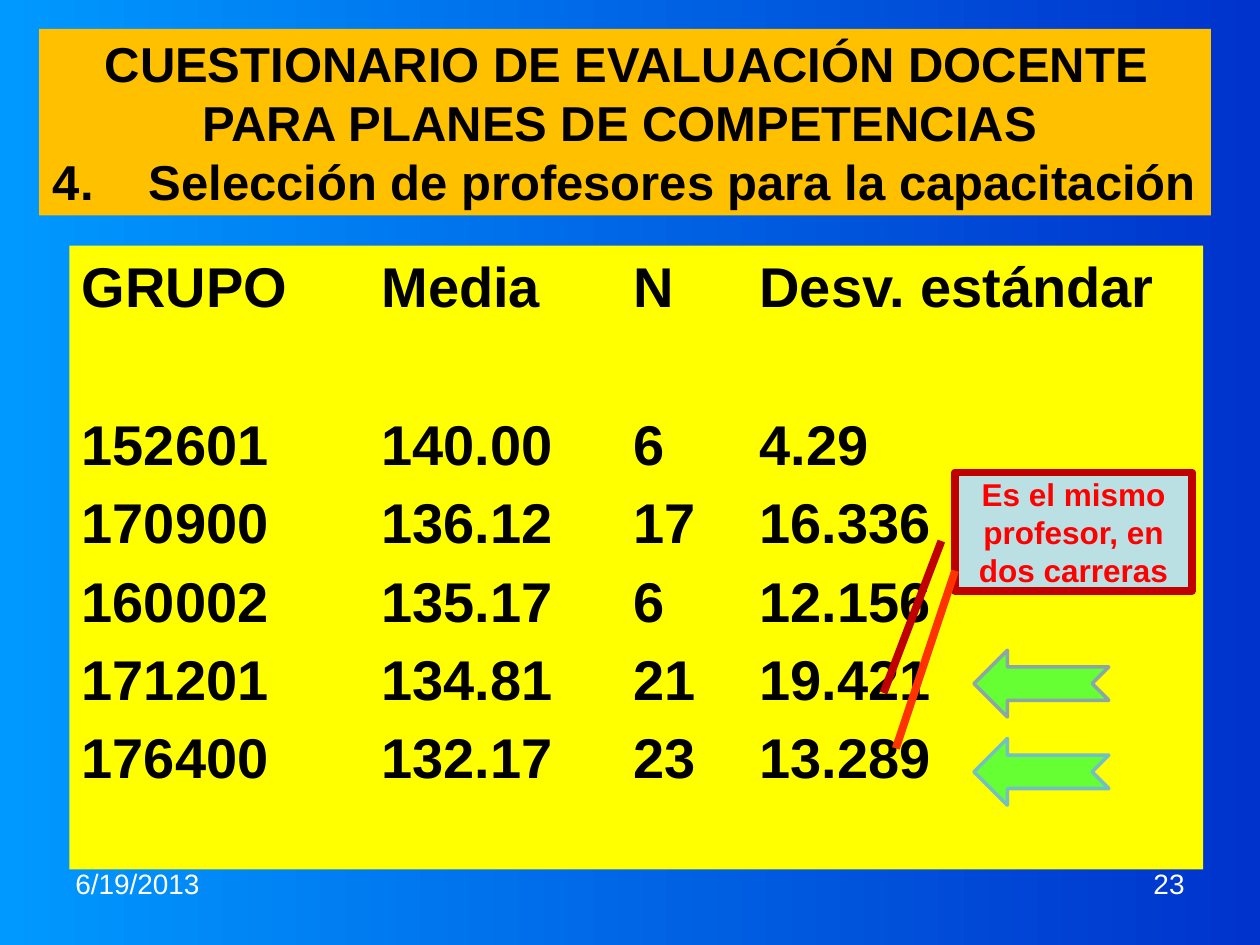
import pptx
import pptx.util
import pptx.dml.color
import pptx.enum.shapes
import pptx.enum.text
import pptx.oxml
import pptx.oxml.ns

COLS, ROWS = 1000, 750
HUES = {
    "sky": "0099FF", "navy": "0033CC", "gold": "FFC000", "yellow": "FFFF00",
    "black": "000000", "white": "FFFFFF", "pale": "BBE0E3", "wine": "C00000",
    "red": "FF0000", "flame": "FF3300", "lime": "66FF33", "gray": "8AA6A8",
    "teal": "72BFC5",
}
HEAD = ["CUESTIONARIO DE EVALUACIÓN DOCENTE", "PARA PLANES DE COMPETENCIAS ",
        "4.\tSelección de profesores para la capacitación"]
DATA = [
    ("GRUPO", "Media", "N", "Desv. estándar"),
    ("152601", "140.00", "6", "4.29"),
    ("170900", "136.12", "17", "16.336"),
    ("160002", "135.17", "6", "12.156"),
    ("171201", "134.81", "21", "19.421"),
    ("176400", "132.17", "23", "13.289"),
]
SHAPE = pptx.enum.shapes.MSO_SHAPE
ALIGN = pptx.enum.text.PP_ALIGN
ANCHOR = pptx.enum.text.MSO_ANCHOR
Pt, Inches = pptx.util.Pt, pptx.util.Inches


def hue(name):
    """Return the colour that has this name."""
    return pptx.dml.color.RGBColor.from_string(HUES[name])


def span(cells):
    """Turn grid cells into a length."""
    return int(cells * Inches(10) / COLS)


def shift(box, part):
    """Move a part's box into the frame of its region."""
    return (box[0] + part[0], box[1] + part[1], *part[2:])


def apply(item, form):
    """Set each attribute that a dict of format values names."""
    for key, value in form.items():
        setattr(item, key, value)


def paint(shape, fill, line=None, width=0):
    """Give a shape a plain fill and an optional outline."""
    shape.fill.solid()
    shape.fill.fore_color.rgb = hue(fill)
    if line:
        shape.line.color.rgb = hue(line)
        shape.line.width = Pt(width)
    else:
        shape.line.fill.background()


def write(shape, lines, size, color, bold=True, align=ALIGN.LEFT, **frame):
    """Write one formatted paragraph for each line."""
    text = shape.text_frame
    base = {"word_wrap": True, "auto_size": pptx.enum.text.MSO_AUTO_SIZE.NONE}
    apply(text, {**base, **frame})
    text.text = "\n".join(lines)
    for para in text.paragraphs:
        para.alignment = align
        for run in para.runs:
            apply(run.font, {"name": "Arial", "size": Pt(size), "bold": bold})
            run.font.color.rgb = hue(color)
    return text.paragraphs


def hang(para, inches):
    """Give a paragraph a hanging indent and tabs one inch apart."""
    props = para._p.get_or_add_pPr()
    props.set("marL", str(Inches(inches)))
    props.set("indent", str(-Inches(inches)))
    props.set("defTabSz", str(Inches(1)))


def draw(slide, kind, box):
    """Add a preset shape without a shadow."""
    shape = slide.shapes.add_shape(kind, *map(span, box))
    shape.shadow.inherit = False
    return shape


def title(slide, box):
    """Place the title band with its numbered last line."""
    shape = slide.shapes.title
    apply(shape, dict(zip(("left", "top", "width", "height"), map(span, box))))
    paint(shape, "gold")
    paras = write(shape, HEAD, 28, "black", align=ALIGN.CENTER,
                  vertical_anchor=ANCHOR.MIDDLE,
                  margin_left=Inches(0.11), margin_right=Inches(0.09))
    for para in paras:
        apply(para, {"line_spacing": 1.0, "space_before": Pt(0)})
    paras[-1].alignment = ALIGN.LEFT
    hang(paras[-1], 0.76)


def note(slide, box):
    """Place the callout about the shared teacher."""
    shape = draw(slide, SHAPE.LINE_CALLOUT_1, box)
    for i, value in enumerate((0.579, -0.058, 1.861, -0.302)):
        shape.adjustments[i] = value
    paint(shape, "pale", "wine", 4.5)
    write(shape, ["Es el mismo profesor, en dos carreras"], 18, "red",
          align=ALIGN.CENTER, vertical_anchor=ANCHOR.MIDDLE)


def arrow(slide, box, line):
    """Place an arrow that points left at a row."""
    shape = draw(slide, SHAPE.NOTCHED_RIGHT_ARROW, box)
    shape.rotation = 180
    paint(shape, "lime", line, 2)


def link(slide, start, end):
    """Draw the line from the callout to the last row."""
    kind = pptx.enum.shapes.MSO_CONNECTOR.STRAIGHT
    line = slide.shapes.add_connector(kind, *map(span, start + end))
    line.line.color.rgb = hue("flame")
    line.line.width = Pt(4.5)
    props = line._element.spPr
    props.append(pptx.oxml.parse_xml(
        "<a:effectLst %s/>" % pptx.oxml.ns.nsdecls("a")))


def board(slide, box):
    """Place the group figures and the marks upon them."""
    panel = draw(slide, SHAPE.RECTANGLE, box)
    paint(panel, "yellow")
    paras = write(panel, ["\t".join(row) for row in DATA], 32, "black",
                  vertical_anchor=ANCHOR.TOP, margin_top=Inches(0.05))
    for i, para in enumerate(paras):
        hang(para, 0.38)
        para.space_before = Pt((0, 51.5)[i] if i < 2 else 6.4)
    note(slide, shift(box, (703, 180, 188, 94)))
    for i, line in enumerate(("gray", "teal")):
        arrow(slide, shift(box, (718, 321 + 70 * i, 107, 53)), line)
    link(slide, shift(box, (703, 258)), shift(box, (656, 399)))


def foot(slide, box):
    """Place the date and the page number at both ends."""
    left, top, width, height = box
    part = 233
    for x, text, align in ((left, "6/19/2013", ALIGN.LEFT),
                           (left + width - part, "23", ALIGN.RIGHT)):
        area = slide.shapes.add_textbox(*map(span, (x, top, part, height)))
        write(area, [text], 16, "white", bold=False, align=align)


def main():
    """Build the slide and save it."""
    deck = pptx.Presentation()
    apply(deck, {"slide_width": span(COLS), "slide_height": span(ROWS)})
    slide = deck.slides.add_slide(deck.slide_layouts[5])
    fill = slide.background.fill
    fill.gradient()
    fill.gradient_angle = 0
    for stop, name, place in zip(fill.gradient_stops, ("sky", "navy"), (0, 1)):
        stop.color.rgb = hue(name)
        stop.position = place
    title(slide, (31, 23, 930, 148))
    foot(slide, (50, 683, 900, 52))
    board(slide, (55, 195, 900, 495))
    deck.save("out.pptx")


if __name__ == "__main__":
    main()
